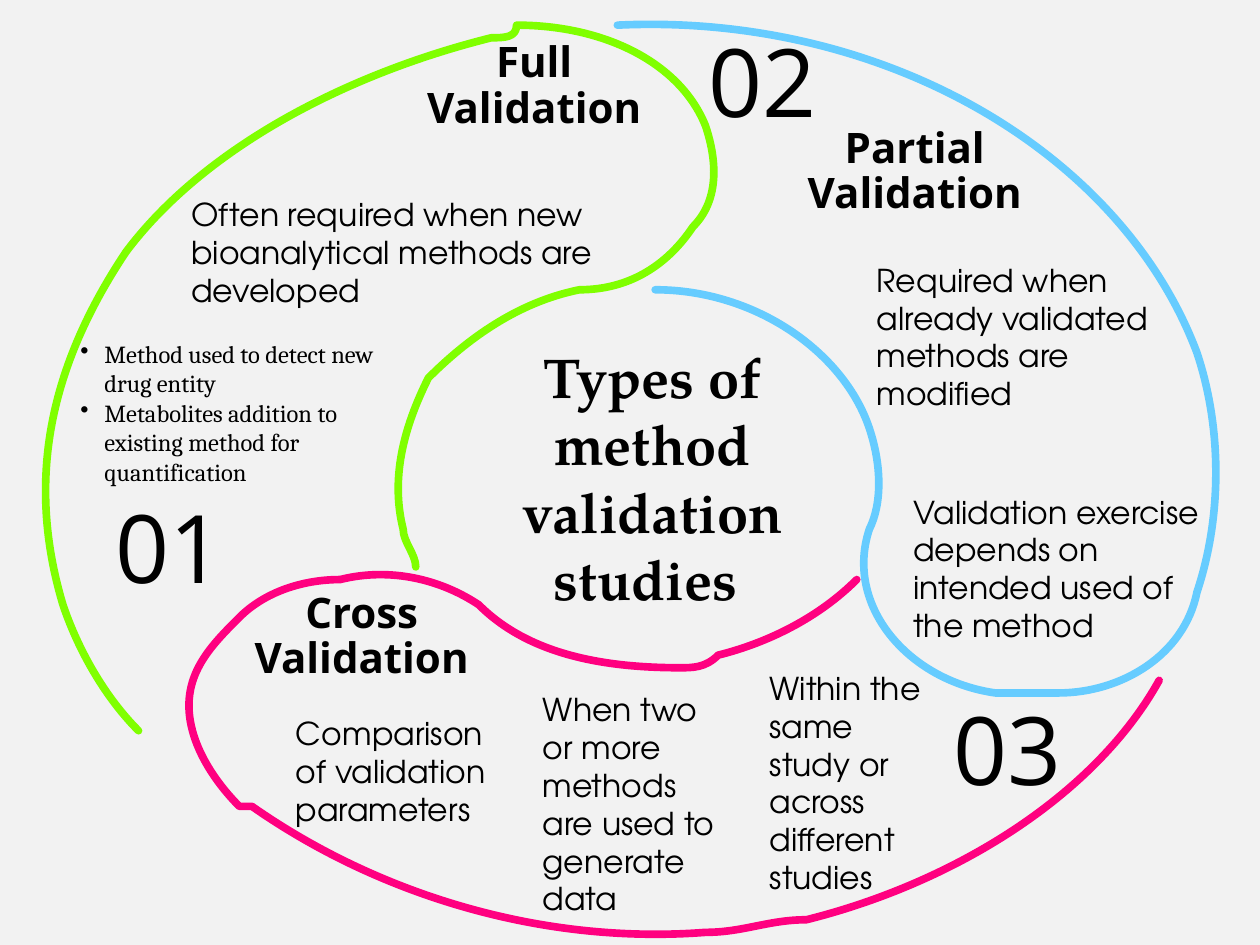
from dataclasses import dataclass
from typing import NamedTuple

from lxml.etree import SubElement
from pptx import Presentation
from pptx.dml.color import RGBColor
from pptx.enum.shapes import MSO_SHAPE
from pptx.enum.text import PP_ALIGN
from pptx.oxml.ns import qn
from pptx.util import Inches, Pt

COLS, ROWS = 100, 75
CELL = Inches(10) // COLS


@dataclass(frozen=True)
class Style:
    font: str
    size: int
    bold: bool = False
    align: PP_ALIGN = PP_ALIGN.LEFT
    inset: float = 1
    spacing: float = 1
    bullet: bool = False


@dataclass(frozen=True)
class Theme:
    paper: str = "F2F2F2"
    ink: str = "000000"
    full: str = "80FF00"
    partial: str = "66CCFF"
    cross: str = "FF0080"
    stroke: float = 4.37
    title: Style = Style("TeX Gyre Pagella", 32, True, PP_ALIGN.CENTER)
    heading: Style = Style("Open Sans", 24, True, PP_ALIGN.CENTER, spacing=0.9)
    number: Style = Style("Open Sans", 54, inset=0, spacing=0.95)
    body: Style = Style("TeX Gyre Adventor", 18)
    bullets: Style = Style("Cambria", 14, bullet=True)


class Box(NamedTuple):
    left: float
    top: float
    width: float
    height: float


class Label(NamedTuple):
    box: Box
    style: Style
    lines: tuple[str, ...]


class Swirl(NamedTuple):
    color: str
    start: tuple[float, float]
    curves: tuple[tuple[float, ...], ...]


T = Theme()

SWIRLS = (
    Swirl(T.full, (33.4, 44.7), (
        (33.1, 43.9, 32.5, 43, 32.3, 42.2),
        (30.9, 38.2, 31.5, 34.1, 34.2, 30.5),
        (36.9, 27, 41.2, 24.4, 46.4, 23.4),
        (50, 22.6, 53.1, 20.9, 54.9, 18.3),
        (56.8, 15.9, 57.3, 13, 56.3, 10.3),
        (54.5, 5.3, 48.2, 2.1, 41.3, 2.5),
        (40.6, 2.6, 39.8, 2.7, 39, 2.9),
        (26.6, 5.5, 16.2, 11.6, 9.9, 20.1),
        (3.5, 28.6, 1.8, 38.4, 5.3, 47.8),
        (6.5, 51.3, 8.5, 54.6, 11, 57.7),
    )),
    Swirl(T.cross, (67.6, 46.3), (
        (65, 49.3, 61.2, 51.4, 56.7, 52.4),
        (55.8, 52.6, 54.7, 52.7, 53.6, 52.8),
        (47.8, 53.3, 42.2, 51.7, 38, 48.5),
        (35.2, 46.3, 31.3, 45.2, 27.4, 45.5),
        (24.3, 45.8, 21.4, 46.9, 19.2, 48.6),
        (16.8, 50.6, 15.3, 53.3, 15.4, 56.1),
        (15.4, 59, 16.8, 61.6, 19.3, 63.6),
        (19.9, 64, 19.9, 64, 19.9, 64),
        (29.6, 71.3, 42.8, 75, 56.1, 73.9),
        (58.7, 73.7, 61.4, 73.4, 63.9, 72.8),
        (76.3, 70.1, 86.7, 63.3, 92.5, 54.5),
    )),
    Swirl(T.partial, (52.1, 22.8), (
        (60.1, 23.4, 67, 27.8, 69.2, 34.1),
        (70.1, 36.7, 70.1, 39.5, 69.2, 42.1),
        (67.4, 47.7, 71.7, 53.5, 78.9, 54.9),
        (80.3, 55.2, 81.9, 55.3, 83.5, 55.2),
        (89.1, 54.8, 93.8, 51.7, 95.2, 47.3),
        (95.4, 46.7, 95.4, 46.7, 95.4, 46.7),
        (97.2, 40.8, 97.1, 34.4, 95, 28.4),
        (89.3, 12, 69.9, 1, 48.6, 1.7),
    )),
)

LABELS = (
    Label(Box(29.1, 2.8, 26.6, 7), T.heading, ("Full", "Validation")),
    Label(Box(60, 9.6, 25.2, 7), T.heading, ("Partial Validation",)),
    Label(Box(18.6, 46.5, 20.2, 7), T.heading, ("Cross Validation",)),
    Label(Box(9.2, 39.5, 16.9, 13.2), T.number, ("01",)),
    Label(Box(56.2, 2.5, 16.9, 13.2), T.number, ("02",)),
    Label(Box(75.7, 55.5, 16.9, 13.2), T.number, ("03",)),
    Label(Box(36.4, 26.7, 30.8, 22), T.title, ("Types of method validation studies ",)),
    Label(Box(14.2, 15, 34.1, 10.1), T.body,
          ("Often required when new bioanalytical methods are developed",)),
    Label(Box(5.4, 26.4, 28.2, 12.8), T.bullets,
          ("Method used to detect new drug entity",
           "Metabolites addition to existing method for quantification")),
    Label(Box(22.5, 56.2, 19.6, 10.1), T.body, ("Comparison of validation parameters",)),
    Label(Box(68.6, 20.2, 27, 13.1), T.body,
          ("Required when already validated methods are modified",)),
    Label(Box(71.5, 38.6, 25.5, 13.1), T.body,
          ("Validation exercise depends on intended used of the method",)),
    Label(Box(42.1, 54.3, 16.3, 19.2), T.body,
          ("When two or more methods are used to generate data",)),
    Label(Box(60.1, 52.6, 14.4, 19.2), T.body,
          ("Within the same study or across different studies",)),
)


def cells(*values: float) -> list[int]:
    return [round(v * CELL) for v in values]


def apply(target, formats: dict) -> None:
    for name, value in formats.items():
        setattr(target, name, value)


def add_paper(s) -> None:
    sp = s.shapes.add_shape(MSO_SHAPE.RECTANGLE, *cells(0, 0, COLS, ROWS))
    sp.fill.solid()
    sp.fill.fore_color.rgb = RGBColor.from_string(T.paper)
    sp.line.fill.background()
    sp.shadow.inherit = False


def add_swirl(s, swirl: Swirl) -> None:
    points = [xy for c in swirl.curves for xy in zip(c[::2], c[1::2])]
    builder = s.shapes.build_freeform(*swirl.start, scale=CELL)
    builder.add_line_segments(points, close=False)
    sp = builder.convert_to_shape()
    outline = next(sp.element.iter(qn("a:path")))
    segments = outline.findall(qn("a:lnTo"))
    for i in range(0, len(segments), 3):
        curve = SubElement(outline, qn("a:cubicBezTo"))
        for segment in segments[i:i + 3]:
            curve.append(segment[0])
            outline.remove(segment)
    sp.fill.background()
    sp.line.color.rgb = RGBColor.from_string(swirl.color)
    sp.line.width = Pt(T.stroke)
    sp.line._get_or_add_ln().set("cap", "rnd")
    sp.shadow.inherit = False


def add_bullet(p) -> None:
    pPr = p._p.get_or_add_pPr()
    indent = cells(1.9)[0]
    pPr.set("marL", str(indent))
    pPr.set("indent", str(-indent))
    SubElement(pPr, qn("a:buChar")).set("char", "•")


def add_label(s, label: Label) -> None:
    style = label.style
    tf = s.shapes.add_textbox(*cells(*label.box)).text_frame
    side, end = cells(style.inset, style.inset / 2)
    apply(tf, {"word_wrap": True, "margin_left": side, "margin_right": side,
               "margin_top": end, "margin_bottom": end})
    for i, line in enumerate(label.lines):
        p = tf.add_paragraph() if i else tf.paragraphs[0]
        apply(p, {"alignment": style.align, "line_spacing": style.spacing})
        if style.bullet:
            add_bullet(p)
        r = p.add_run()
        r.text = line
        apply(r.font, {"name": style.font, "size": Pt(style.size), "bold": style.bold})
        r.font.color.rgb = RGBColor.from_string(T.ink)


def main() -> None:
    prs = Presentation()
    apply(prs, {"slide_width": COLS * CELL, "slide_height": ROWS * CELL})
    s = prs.slides.add_slide(prs.slide_layouts[6])
    add_paper(s)
    for swirl in SWIRLS:
        add_swirl(s, swirl)
    for label in LABELS:
        add_label(s, label)
    prs.save("out.pptx")


if __name__ == "__main__":
    main()
